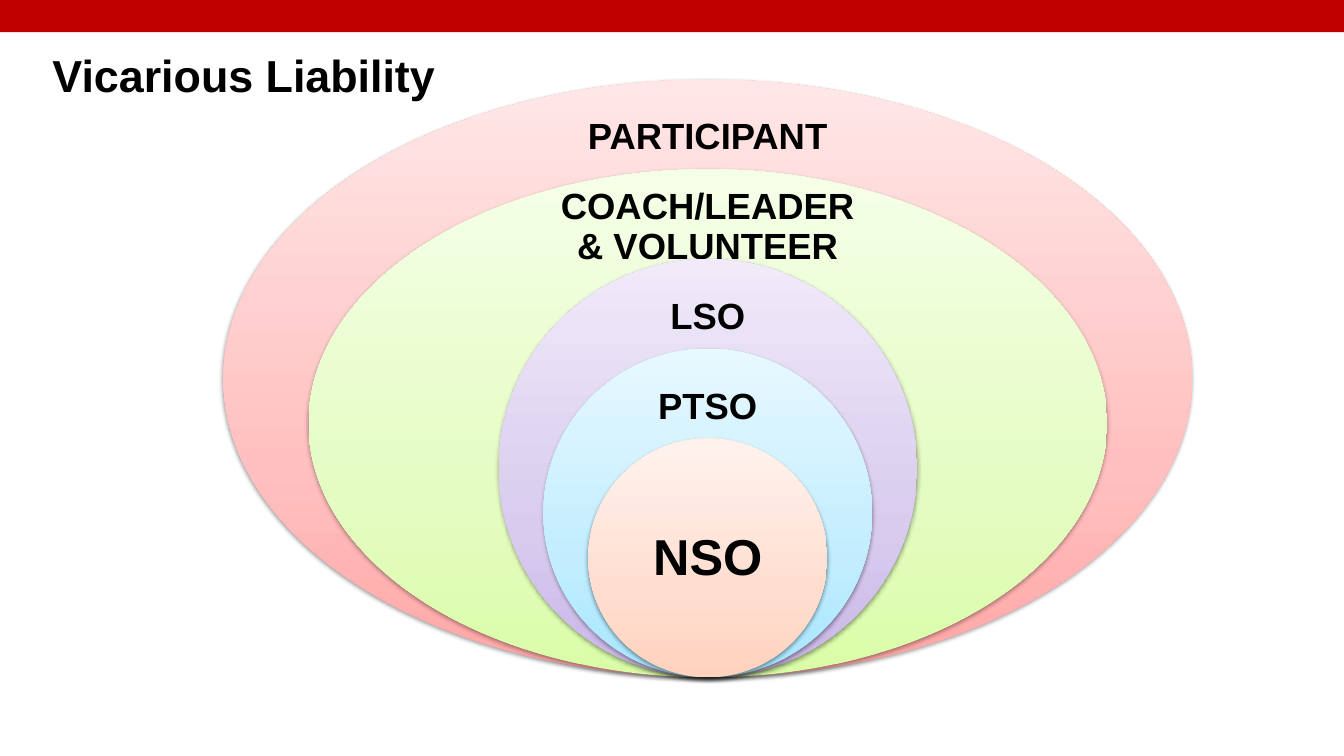
from copy import deepcopy

from lxml import etree
from pptx import Presentation
from pptx import util as u
from pptx.dml.color import RGBColor
from pptx.enum import shapes, text
from pptx.oxml.ns import qn


def color(hex_value):
    return RGBColor.from_string(hex_value)


def style_text(frame, size, inset):
    frame.vertical_anchor = text.MSO_ANCHOR.MIDDLE
    frame.margin_left = frame.margin_right = u.Inches(inset)
    frame.margin_top = frame.margin_bottom = u.Inches(inset)
    font = frame.paragraphs[0].runs[0].font
    font.name, font.size, font.bold = "Arial", u.Pt(size), True
    font.color.rgb = color("000000")


deck = Presentation()
deck.slide_width, deck.slide_height = u.Inches(13.33), u.Inches(7.5)
slide = deck.slides.add_slide(deck.slide_layouts[5])

# Red band along the top edge
band = slide.shapes.add_shape(shapes.MSO_SHAPE.RECTANGLE, 0, 0, deck.slide_width, u.Inches(0.32))
band.shadow.inherit = False
band.fill.solid()
band.fill.fore_color.rgb = color("C00000")
band.line.fill.background()

# Title
title = slide.shapes.title
title.left, title.top = u.Inches(0.42), u.Inches(0.42)
title.width, title.height = u.Inches(4.03), u.Inches(0.64)
title.text_frame.text = "Vicarious Liability"
title.text_frame.word_wrap = False
title.text_frame.paragraphs[0].alignment = text.PP_ALIGN.LEFT
style_text(title.text_frame, 32, 0.1)

# Nested layers, outermost first, sharing one bottom point
CENTER, BOTTOM, OUTER_HEIGHT, STEP = 7.02, 6.72, 5.93, 0.89
# name, layer width, label width, gradient from bottom to top
layers = [
    ("PARTICIPANT", 9.61, 3.6, ("FFA6A5", "FFC0BF", "FFE7E7")),
    ("COACH/LEADER & VOLUNTEER", 7.92, 3.42, ("DAFDA7", "E4FCC2", "F5FFE7")),
    ("LSO", 4.15, 2.15, ("C9B5E8", "D8CBEE", "F0EAF9")),
    ("PTSO", 3.26, 1.76, ("A7E6FF", "C1EDFF", "E7F8FF")),
    ("NSO", 2.37, 1.68, ("FFD2BD", "FFDED0", "FFF2ED")),
]
for level, (name, width, label_width, shades) in enumerate(layers):
    height = OUTER_HEIGHT - level * STEP
    top = BOTTOM - height
    layer = slide.shapes.add_shape(
        shapes.MSO_SHAPE.OVAL, u.Inches(CENTER - width / 2), u.Inches(top),
        u.Inches(width), u.Inches(height))
    layer.line.fill.background()

    # Three-stop gradient running upwards
    layer.fill.gradient()
    layer.fill.gradient_angle = 90
    properties = layer._element.spPr
    stops = properties.find(".//" + qn("a:gsLst"))
    stops.insert(1, deepcopy(stops[0]))
    for stop, position, shade in zip(layer.fill.gradient_stops, (0, 0.35, 1), shades):
        stop.position = position
        stop.color.rgb = color(shade)

    # Soft shadow below
    layer.shadow.inherit = False
    shadow = etree.SubElement(
        properties.find(qn("a:effectLst")), qn("a:outerShdw"), blurRad=str(u.Pt(3.1)),
        dist=str(u.Pt(1.6)), dir="5400000", rotWithShape="0")
    black = etree.SubElement(shadow, qn("a:srgbClr"), val="000000")
    etree.SubElement(black, qn("a:alpha"), val="38000")

    # Label: near the top of each ring, in the middle of the core
    is_core = level == len(layers) - 1
    offset, label_height, size, inset = (0.6, 1.19, 36, 0.28) if is_core else (0.29, 0.58, 26, 0.2)
    label = slide.shapes.add_textbox(
        u.Inches(CENTER - label_width / 2), u.Inches(top + offset),
        u.Inches(label_width), u.Inches(label_height))
    label.text_frame.text = name
    label.text_frame.word_wrap = True
    label.text_frame.paragraphs[0].alignment = text.PP_ALIGN.CENTER
    label.text_frame.paragraphs[0].line_spacing = 0.9
    style_text(label.text_frame, size, inset)

deck.save("out.pptx")
